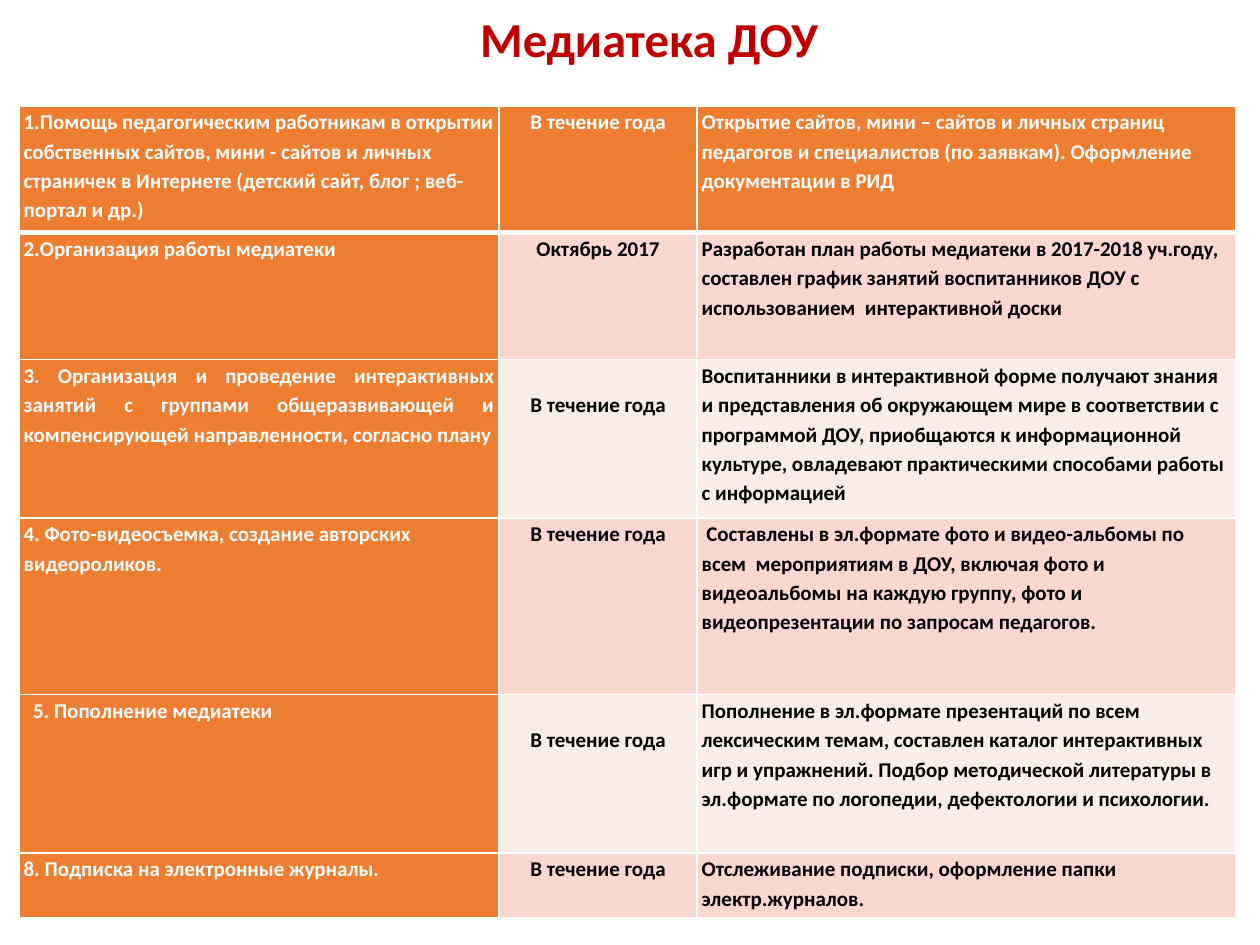
from dataclasses import dataclass

from lxml import etree
from pptx import Presentation
from pptx.dml.color import RGBColor
from pptx.enum.text import PP_ALIGN
from pptx.oxml.ns import qn
from pptx.util import Pt

LEFT, MID, JUST = PP_ALIGN.LEFT, PP_ALIGN.CENTER, PP_ALIGN.JUSTIFY
FONT = "Calibri"
WHITE, BLACK, RED = "FFFFFF", "000000", "C00000"
ORANGE, ROSE, PALE = "ED7D31", "F8D7CE", "FCECE8"
LINE = 16.8  # height of one text line in the table


@dataclass
class Row:
    high: float
    task: str
    date: str
    result: str
    drop: float = 0  # space above the date
    align: PP_ALIGN = LEFT  # alignment of the task
    dent: float = 0  # first-line indent of the task
    shift: float = 0  # first-line indent of the result


YEAR = "В течение года"
COLS = [274.5, 113, 308]
ROWS = [
    Row(72.5, "1.Помощь педагогическим работникам в открытии собственных сайтов, "
        "мини - сайтов и личных страничек в Интернете (детский сайт, блог ; "
        "веб-портал и др.)", YEAR,
        "Открытие сайтов, мини – сайтов и личных страниц педагогов и "
        "специалистов (по заявкам). Оформление документации в РИД"),
    Row(72.5, "2.Организация работы медиатеки", "Октябрь 2017",
        "Разработан план работы медиатеки в 2017-2018 уч.году, составлен график "
        "занятий воспитанников ДОУ с использованием  интерактивной доски"),
    Row(90.5, "3. Организация и проведение интерактивных занятий с группами "
        "общеразвивающей и компенсирующей направленности, согласно плану", YEAR,
        "Воспитанники в интерактивной форме получают знания и представления об "
        "окружающем мире в соответствии с программой ДОУ, приобщаются к "
        "информационной культуре, овладевают практическими способами работы "
        "с информацией", drop=LINE, align=JUST),
    Row(101, "4. Фото-видеосъемка, создание авторских видеороликов.", YEAR,
        "Составлены в эл.формате фото и видео-альбомы по всем  мероприятиям в "
        "ДОУ, включая фото и видеоальбомы на каждую группу, фото и "
        "видеопрезентации по запросам педагогов.", shift=2.7),
    Row(90.5, "5. Пополнение медиатеки", YEAR,
        "Пополнение в эл.формате презентаций по всем лексическим темам, "
        "составлен каталог интерактивных игр и упражнений. Подбор методической "
        "литературы в эл.формате по логопедии, дефектологии и психологии.",
        drop=LINE, dent=5.4),
    Row(37, "8. Подписка на электронные журналы.", YEAR,
        "Отслеживание подписки, оформление папки электр.журналов."),
]


def tint(code: str) -> RGBColor:
    return RGBColor.from_string(code)


def write(frame, text: str, size: float, color: str, align, space: float,
          dent: float = 0) -> None:
    frame.word_wrap = True
    para = frame.paragraphs[0]
    para.alignment, para.line_spacing = align, space
    if dent:
        para._p.get_or_add_pPr().set("indent", str(Pt(dent)))
    run = para.add_run()
    run.text = text
    font = run.font
    font.name, font.size, font.bold = FONT, Pt(size), True
    font.color.rgb = tint(color)


def edge(cell, side: str, width: float) -> None:
    line = etree.SubElement(cell._tc.get_or_add_tcPr(), qn("a:ln" + side),
                            w=str(Pt(width)))
    fill = etree.SubElement(line, qn("a:solidFill"))
    etree.SubElement(fill, qn("a:srgbClr"), val=WHITE)


def paint(cell, fill: str, top: float, head: bool, under: bool) -> None:
    cell.margin_left = cell.margin_right = Pt(2.7)
    cell.margin_top, cell.margin_bottom = Pt(top), Pt(0)
    for side in "LR":
        edge(cell, side, 1)
    edge(cell, "T", 3 if under else 1)
    edge(cell, "B", 3 if head else 1)
    cell.fill.solid()
    cell.fill.fore_color.rgb = tint(fill)


def build() -> None:
    deck = Presentation()
    deck.slide_width, deck.slide_height = Pt(720), Pt(540)
    slide = deck.slides.add_slide(deck.slide_layouts[6])

    # Title
    box = slide.shapes.add_textbox(Pt(61), Pt(9), Pt(620), Pt(34))
    frame = box.text_frame
    frame.margin_left = frame.margin_right = Pt(0)
    frame.margin_top = frame.margin_bottom = Pt(0)
    write(frame, "Медиатека ДОУ", 27.9, RED, MID, 0.9)

    # Table grid
    grid = slide.shapes.add_table(
        len(ROWS), len(COLS), Pt(10.8), Pt(60.5), Pt(sum(COLS)),
        Pt(sum(row.high for row in ROWS))).table
    grid.horz_banding = False
    for col, wide in zip(grid.columns, COLS):
        col.width = Pt(wide)

    # Rows: orange head and first column, banded body
    for r, row in enumerate(ROWS):
        grid.rows[r].height = Pt(row.high)
        band = ROSE if r % 2 else PALE
        parts = [(row.task, row.align, row.dent, 0),
                 (row.date, MID, 0, row.drop),
                 (row.result, LEFT, row.shift, 0)]
        for c, (text, align, dent, top) in enumerate(parts):
            cell = grid.cell(r, c)
            dark = r == 0 or c == 0
            paint(cell, ORANGE if dark else band, top, r == 0, r == 1)
            write(cell.text_frame, text, 12, WHITE if dark else BLACK,
                  align, 1.15, dent)

    deck.save("out.pptx")


if __name__ == "__main__":
    build()
